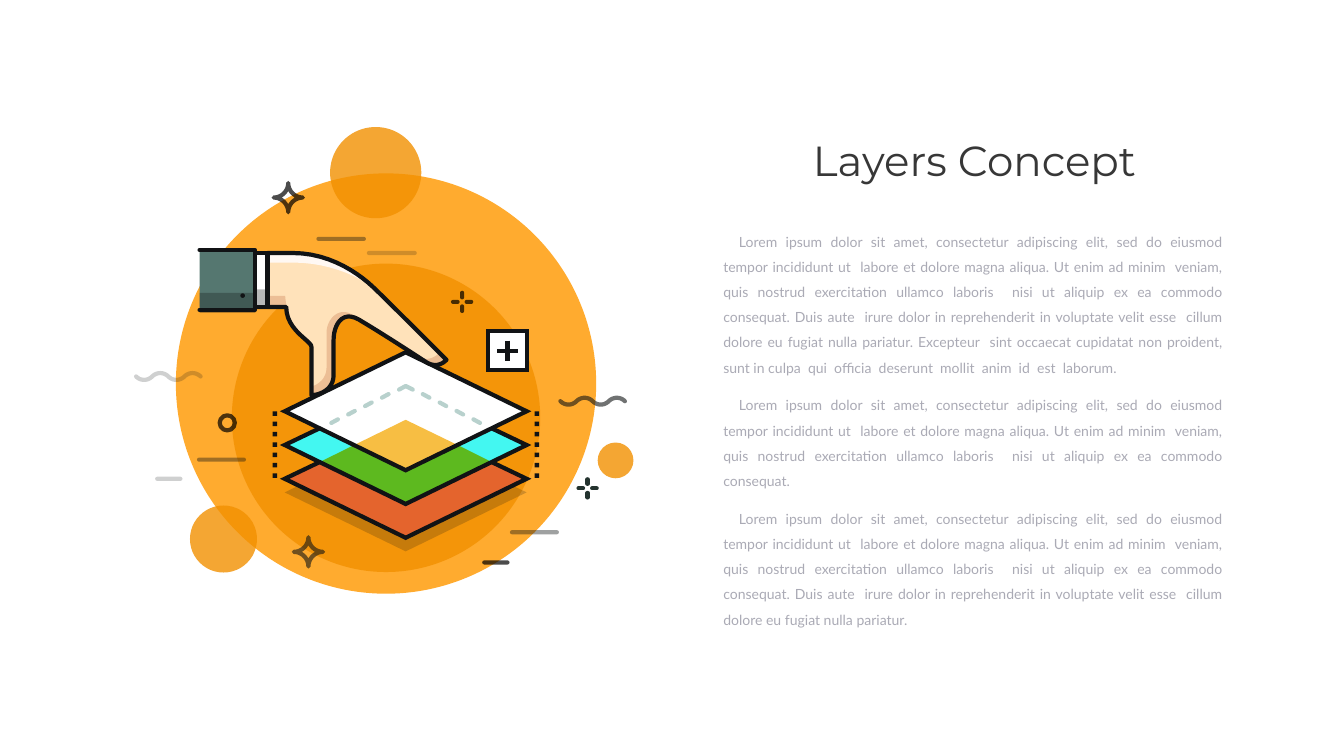
from lxml import etree
from pptx import Presentation
from pptx.dml.color import RGBColor
from pptx.enum.shapes import MSO_CONNECTOR, MSO_SHAPE
from pptx.enum.text import MSO_ANCHOR, MSO_AUTO_SIZE, PP_ALIGN
from pptx.oxml.ns import qn
from pptx.util import Cm, Pt

CENTER, JUSTIFY = PP_ALIGN.CENTER, PP_ALIGN.JUSTIFY
TOP, NO_AUTOFIT = MSO_ANCHOR.TOP, MSO_AUTO_SIZE.NONE
STRAIGHT = MSO_CONNECTOR.STRAIGHT
PRESETS = {"oval": MSO_SHAPE.OVAL, "rect": MSO_SHAPE.RECTANGLE}

# Colours as (hex, opacity in percent)
NONE = (None, 100)
INK, WHITE = ("111315", 100), ("FFFFFF", 100)
ORANGE = ("F29000", 80)
SHADE = ("111415", 30)
INK_20, INK_40, INK_60 = [("111415", opacity) for opacity in (20, 40, 60)]
BLACK_70 = ("000000", 70)
DARK_GREEN, PALE_GREEN = ("24332F", 100), ("B8D1CD", 100)
GRID = 2.54  # cm in one unit of the illustration grid
CURVE_STEPS = 12


def paint(fill_format, color, opacity=100):
    if color is None:
        fill_format.background()
        return
    fill_format.solid()
    fill_format.fore_color.rgb = RGBColor.from_string(color)
    if opacity < 100:
        color_element = fill_format._xPr.find(qn("a:solidFill"))[0]
        etree.SubElement(color_element, qn("a:alpha")).set("val", str(opacity * 1000))


def write_text(paragraph, text, *, font, size, color, align, indent=0, line_spacing=1, space_before=0):
    run = paragraph.add_run()
    run.text = text
    run.font.name, run.font.size = font, Pt(size)
    paint(run.font.fill, color)
    paragraph.alignment = align
    paragraph.line_spacing = line_spacing
    paragraph.space_before = Pt(space_before)
    properties = paragraph._p.get_or_add_pPr()
    properties.set("marL", "0")
    properties.set("indent", str(Cm(indent)))
    etree.SubElement(properties, qn("a:buNone"))


presentation = Presentation()
presentation.slide_width, presentation.slide_height = Cm(67.74), Cm(38.1)
slide = presentation.slides.add_slide(presentation.slide_layouts[1])
title, body = slide.shapes.title, slide.placeholders[1]

# Title and body text
for shape, (left, top, width, height) in ((title, (36.07, 6.65, 26.09, 2.82)),
                                          (body, (36.2, 11.2, 25.68, 19.48))):
    shape.left, shape.top, shape.width, shape.height = Cm(left), Cm(top), Cm(width), Cm(height)
    shape.text_frame.auto_size = NO_AUTOFIT
    shape.text_frame.vertical_anchor = TOP
    shape.text_frame.word_wrap = True
write_text(title.text_frame.paragraphs[0], "Layers Concept",
           font="Montserrat", size=60, color="373737", align=CENTER)

short_text = ("Lorem ipsum dolor sit amet, consectetur adipiscing elit, sed do eiusmod tempor incididunt ut  "
              "labore et dolore magna aliqua. Ut enim ad minim  veniam, quis nostrud exercitation ullamco "
              "laboris  nisi ut aliquip ex ea commodo consequat.")
medium_text = short_text + (" Duis aute  irure dolor in reprehenderit in voluptate velit esse  "
                            "cillum dolore eu fugiat nulla pariatur.")
long_text = medium_text + (" Excepteur  sint occaecat cupidatat non proident, sunt in culpa  qui  officia  "
                           "deserunt  mollit  anim  id  est  laborum.")
for index, text in enumerate((long_text, short_text, medium_text)):
    frame = body.text_frame
    paragraph = frame.add_paragraph() if index else frame.paragraphs[0]
    write_text(paragraph, text, font="Lato", size=20, color="AAAAB5", align=JUSTIFY,
               indent=0.79, line_spacing=1.5, space_before=18)

# Illustration parts: (kind, geometry, fill, line), from back to front.
# Points in outlines are (x, y); curves are (x1, y1, x2, y2, x, y).
backdrop = [("oval", (3.49, 3.44, 8.34, 8.34), ("FFAB2F", 100), NONE)]
for x, y, size in ((4.6, 5.23, 6.12), (6.55, 2.52, 1.81), (3.77, 10.03, 1.33), (11.86, 8.78, 0.71)):
    backdrop.append(("oval", (x, y, size, size), ORANGE, NONE))

# Ornaments: waves, strokes, stars, sparks and a ring
ornaments = []
for x, y, line in ((11.12, 7.96, INK_60), (2.7, 7.47, INK_20)):
    wave = [(x, y)]
    for bend in (0.12, -0.12, 0.12, -0.12):
        wave.append((x + 0.09, y + bend * 0.75, x + 0.23, y + bend * 0.75, x + 0.32, y))
        x += 0.32
    ornaments.append(("open", wave, NONE, line))
for x, y, length, line in ((3.95, 9.12, 0.89, INK_40), (6.32, 4.74, 0.9, INK_40), (10.16, 10.56, 0.89, INK_40),
                           (3.12, 9.5, 0.46, INK_20), (9.61, 11.16, 0.46, BLACK_70), (7.32, 5.02, 0.91, INK_20)):
    ornaments.append(("line", (x, y, x + length, y), NONE, line))
for x, y, line in ((6.12, 10.95, INK_60), (5.72, 3.92, BLACK_70)):
    star = [(x, y + 0.29)]
    for from_x, from_y, to_x, to_y in ((0, 1, -1, 0), (-1, 0, 0, -1), (0, -1, 1, 0), (1, 0, 0, 1)):
        star.append((x + 0.13 * from_x, y + 0.13 * from_y, x + 0.13 * to_x, y + 0.13 * to_y,
                     x + 0.29 * to_x, y + 0.29 * to_y))
    ornaments.append(("closed", star, NONE, line))
for x, y, line in ((9.17, 5.99, BLACK_70), (11.66, 9.69, DARK_GREEN)):
    for across, down in ((0, -1), (-1, 0), (0, 1), (1, 0)):
        ornaments.append(("line", (x + 0.09 * across, y + 0.09 * down,
                                   x + 0.18 * across, y + 0.18 * down), NONE, line))
ornaments.append(("oval", (4.36, 8.24, 0.3, 0.3), NONE, BLACK_70))

# Plus box
plus_box = [("rect", (9.69, 6.57, 0.77, 0.77), WHITE, INK),
            ("line", (10.07, 6.76, 10.07, 7.16), NONE, INK),
            ("line", (9.87, 6.96, 10.27, 6.96), NONE, INK)]

# Stacked layers with their shadow
shadow, sheet = [[(8.05, y - 1.17), (5.65, y), (8.05, y + 1.17), (10.45, y)] for y in (9.77, 8.16)]
layers = [("closed", shadow, INK_20, NONE)]
for y, color in ((9.5, "E4642D"), (8.83, "43F7F1")):
    edge = [(6.34, y - 0.33), (5.65, y), (8.05, y + 1.17), (10.45, y), (9.76, y - 0.33)]
    layers.append(("closed", edge + [(8.05, y + 0.5)], (color, 100), NONE))
    if y == 8.83:
        overlap = [(6.34, 9.17), (7.03, 8.83), (8.05, 9.33), (9.08, 8.83), (9.76, 9.17), (8.05, 10)]
        layers.append(("closed", overlap, ("5DB91F", 100), NONE))
    layers.append(("open", edge, NONE, INK))
layers += [("closed", sheet, WHITE, NONE),
           ("closed", [(8.05, 8.33), (7.03, 8.83), (8.05, 9.33), (9.08, 8.83)], ("F7BE43", 100), NONE),
           ("closed", sheet, NONE, INK)]

# Dashes on the top layer, mirrored about its middle
dashes = [("open", [(7.92, 7.73), (8.05, 7.66), (8.19, 7.73)], NONE, PALE_GREEN)]
for step in range(4):
    x, y = 8.39 + 0.335 * step, 7.82 + 0.167 * step
    dashes.append(("line", (x, y, x + 0.13, y + 0.07), NONE, PALE_GREEN))
    dashes.append(("line", (15.97 - x, y + 0.07, 16.1 - x, y), NONE, PALE_GREEN))

# Hand
hand_outline = [(5.31, 5.02), (5.81, 5.02), (6.59, 5.02, 7.18, 5.47, 7.46, 5.75),
                (7.68, 5.96, 8.86, 7.14, 8.86, 7.14), (8.76, 7.24, 8.62, 7.29, 8.45, 7.18),
                (8.19, 7.01, 7.59, 6.62, 7.12, 6.34), (6.77, 6.14, 6.62, 6.48, 6.62, 6.74),
                (6.62, 7.44), (6.62, 7.74, 6.33, 7.84, 6.18, 7.84), (6.18, 6.88),
                (6.18, 6.76, 5.68, 6.56, 5.68, 6.09), (5.31, 6.09)]
highlight = [(7.53, 5.82), (7.5, 5.79, 7.48, 5.76, 7.46, 5.75), (7.18, 5.47, 6.59, 5.02, 5.81, 5.02),
             (5.31, 5.02), (5.31, 5.21), (5.81, 5.21), (6.59, 5.21, 7.26, 5.54, 7.53, 5.82)]
fingertip_shade = [(8.72, 7), (8.62, 7.1, 8.45, 7.18, 8.28, 7.07), (8.45, 7.18),
                   (8.62, 7.29, 8.76, 7.24, 8.86, 7.14)]
thumb_shade = [(6.48, 6.6), (6.48, 7.29), (6.48, 7.51, 6.32, 7.63, 6.18, 7.67), (6.18, 7.84),
               (6.33, 7.84, 6.62, 7.74, 6.62, 7.44), (6.62, 6.74), (6.62, 6.48, 6.77, 6.15, 7.11, 6.34),
               (7.13, 6.34), (7.08, 6.29, 7.03, 6.26, 6.97, 6.23), (6.71, 6.09, 6.48, 6.34, 6.48, 6.6)]
wrist_shade = [(5.31, 5.87), (5.31, 6.09), (5.69, 6.09), (5.68, 6.05, 5.66, 5.92, 5.66, 5.87)]
hand = [("closed", hand_outline, ("FFE2BA", 100), NONE), ("closed", highlight, ("FFF8F3", 100), NONE)]
for outline in (fingertip_shade, thumb_shade, wrist_shade):
    hand.append(("closed", outline, ("ECBE95", 100), NONE))
hand.append(("open", hand_outline, NONE, INK))

# Sleeve and cuff
sleeve = [("rect", (3.96, 4.96, 1.11, 1.19), ("557770", 100), NONE),
          ("rect", (3.96, 5.81, 1.11, 0.4), SHADE, NONE),
          ("rect", (5.07, 5.02, 0.24, 1.07), WHITE, NONE),
          ("rect", (5.07, 5.74, 0.24, 0.4), SHADE, NONE),
          ("open", [(3.96, 6.15), (5.06, 6.15), (5.06, 4.96), (3.96, 4.96)], NONE, INK),
          ("open", [(5.07, 6.09), (5.31, 6.09), (5.31, 5.02), (5.07, 5.02)], NONE, INK),
          ("oval", (4.77, 5.82, 0.09, 0.09), INK, NONE)]

# Dotted guides beside the layers
guides = [("rect", (x, 8.16 + 0.205 * step, 0.09, 0.09), INK, NONE) for x in (5.41, 10.61) for step in range(7)]

# Draw every group of parts
for parts in (backdrop, ornaments, plus_box, layers, dashes, hand, sleeve, guides):
    shapes = slide.shapes.add_group_shape().shapes
    sharp = parts is plus_box or parts is layers
    for kind, geometry, fill, line in parts:
        if kind in PRESETS:
            shape = shapes.add_shape(PRESETS[kind], *[Cm(GRID * value) for value in geometry])
        elif kind == "line":
            shape = shapes.add_connector(STRAIGHT, *[Cm(GRID * value) for value in geometry])
        else:
            points = [geometry[0]]
            for segment in geometry[1:]:
                if len(segment) == 2:
                    points.append(segment)
                    continue
                controls = (points[-1], segment[:2], segment[2:4], segment[4:])
                for step in range(1, CURVE_STEPS + 1):
                    t = step / CURVE_STEPS
                    weights = ((1 - t) ** 3, 3 * t * (1 - t) ** 2, 3 * t * t * (1 - t), t ** 3)
                    points.append([sum(w * c[axis] for w, c in zip(weights, controls)) for axis in (0, 1)])
            points = [(Cm(GRID * x), Cm(GRID * y)) for x, y in points]
            builder = shapes.build_freeform(*points[0])
            builder.add_line_segments(points[1:], close=kind == "closed")
            shape = builder.convert_to_shape()
        paint(shape.line.fill, *line)
        if line != NONE:
            shape.line.width = Pt(6)
            line_element = shape.line._ln
            line_element.set("cap", "flat" if sharp else "rnd")
            etree.SubElement(line_element, qn("a:miter" if sharp else "a:round"))
        if kind == "line":
            etree.SubElement(shape._element.spPr, qn("a:effectLst"))
        else:
            paint(shape.fill, *fill)
            shape.shadow.inherit = False

presentation.save("out.pptx")
